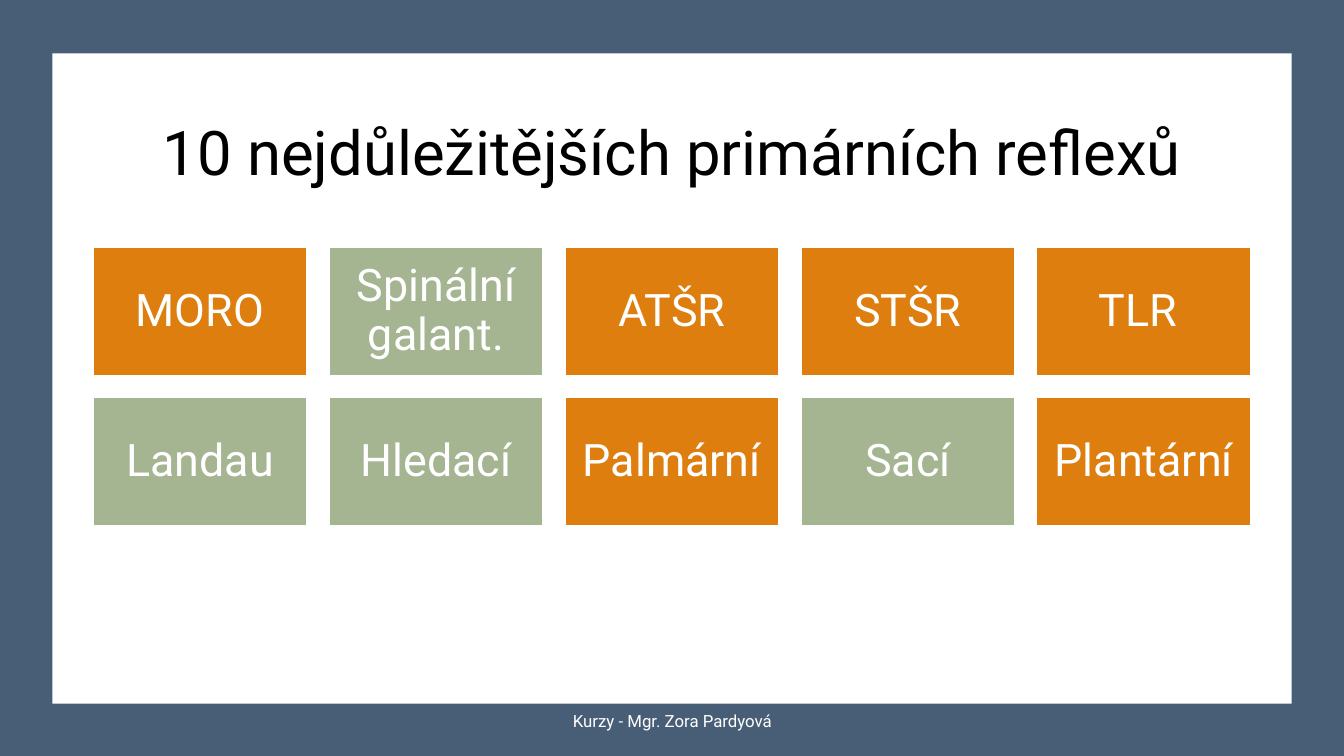
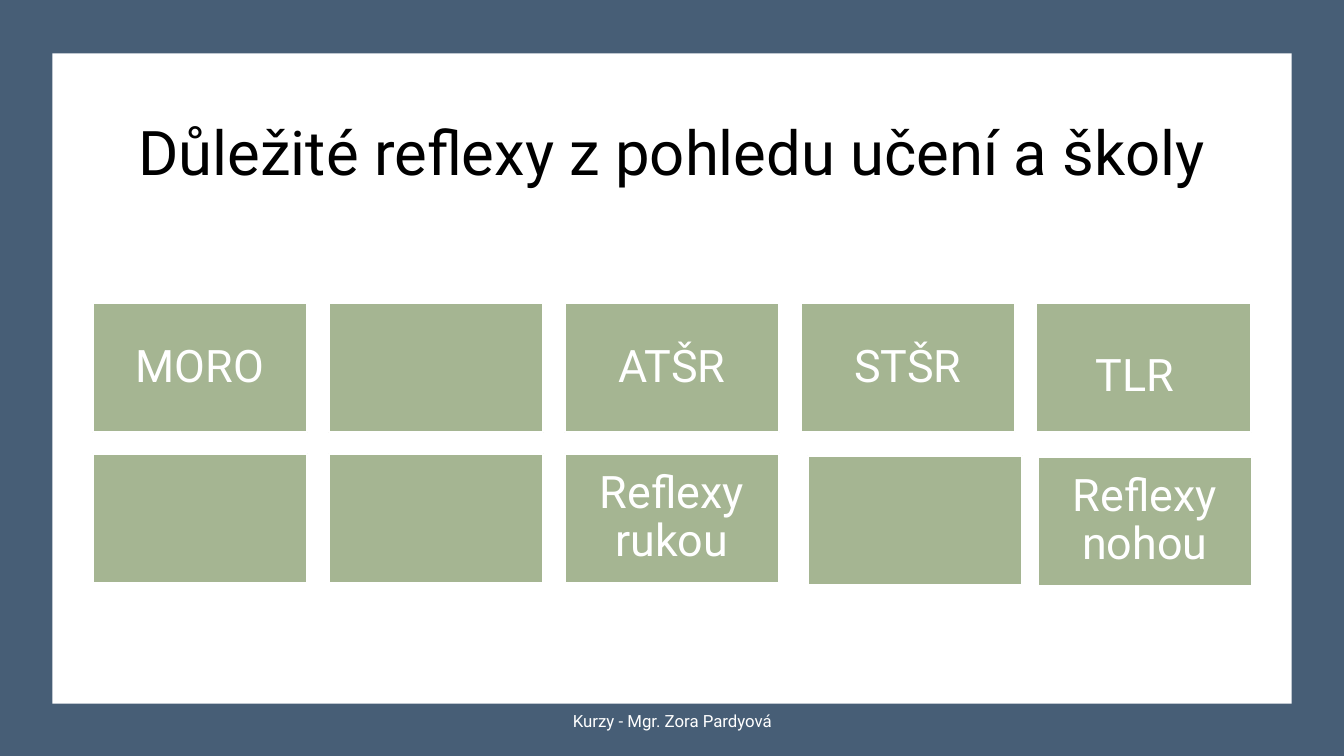
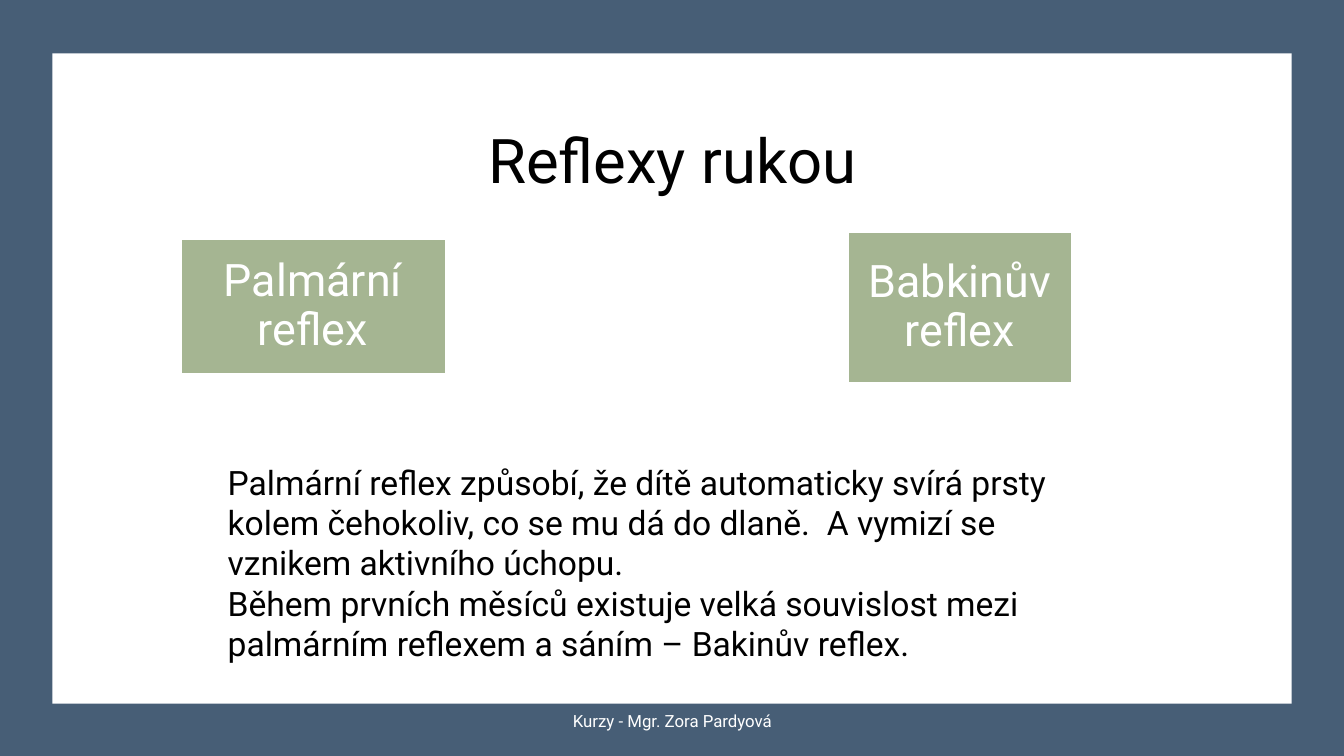
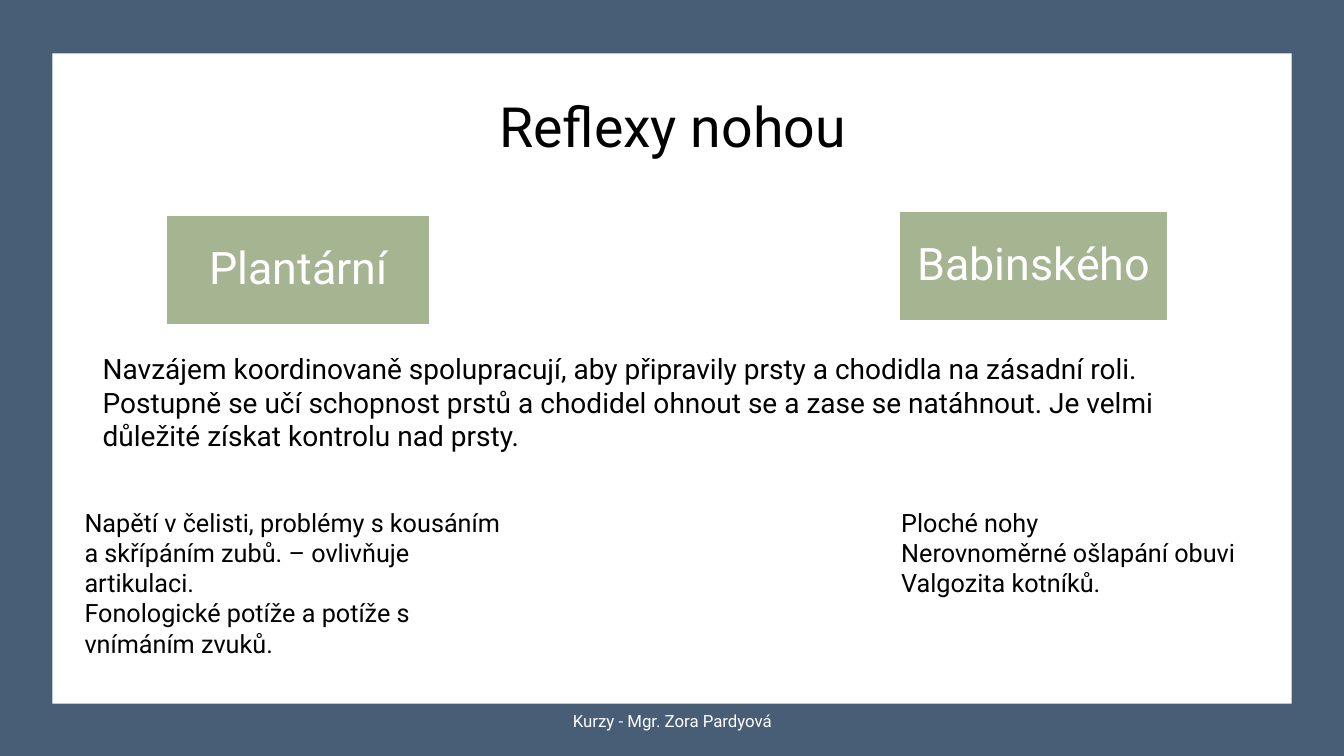
from pptx import Presentation
from pptx.dml.color import RGBColor
from pptx.enum.shapes import MSO_SHAPE
from pptx.enum.text import MSO_ANCHOR, PP_ALIGN
from pptx.util import Inches, Pt

FONT = "Roboto"
NAVY, WHITE, BLACK = "475E76", "FFFFFF", "000000"
ORANGE, SAGE = "DD7E0E", "A5B592"
WIDTH, HEIGHT = 13.33, 7.5
MARGIN, CONTENT_WIDTH = 0.92, 11.5
COLUMNS, TILE_WIDTH, TILE_HEIGHT, GAP = 5, 2.13, 1.28, 0.21


def add_panel(slide, place, fill, label="", outlined=False):
    panel = slide.shapes.add_shape(MSO_SHAPE.RECTANGLE, *map(Inches, place))
    panel.shadow.inherit = False
    panel.fill.solid()
    panel.fill.fore_color.rgb = RGBColor.from_string(fill)
    if outlined:
        panel.line.color.rgb = RGBColor.from_string(WHITE)
        panel.line.width = Pt(1.5)
    else:
        panel.line.fill.background()
    if label:
        write(panel.text_frame, [label], 32, WHITE, True, 0.9)
        for side in ("left", "top", "right", "bottom"):
            setattr(panel.text_frame, f"margin_{side}", Inches(0.13))
    return panel


def write(frame, lines, size, colour, centred=False, spacing=1.0):
    frame.word_wrap = True
    frame.vertical_anchor = MSO_ANCHOR.MIDDLE if centred else MSO_ANCHOR.TOP
    frame.text = "\n".join(lines)
    for paragraph in frame.paragraphs:
        paragraph.alignment = PP_ALIGN.CENTER if centred else PP_ALIGN.LEFT
        paragraph.line_spacing = spacing
        for run in paragraph.runs:
            run.font.name = FONT
            run.font.size = Pt(size)
            run.font.color.rgb = RGBColor.from_string(colour)


deck = Presentation()
deck.slide_width, deck.slide_height = Inches(WIDTH), Inches(HEIGHT)

headings = [
    ("10 nejdůležitějších primárních reflexů", 0.87, 44),
    ("Důležité reflexy z pohledu učení a školy", 0.87, 44),
    ("Reflexy rukou", 0.95, 44),
    ("Reflexy nohou", 0.62, 39.6),
]
for heading, top, size in headings:
    slide = deck.slides.add_slide(deck.slide_layouts[6])
    add_panel(slide, (0, 0, WIDTH, HEIGHT), NAVY)
    add_panel(slide, (0.52, 0.53, 12.29, 6.45), WHITE)
    footer = slide.shapes.add_textbox(*map(Inches, (4.42, 6.95, 4.5, 0.4)))
    write(footer.text_frame, ["Kurzy - Mgr. Zora Pardyová"], 12, WHITE, True)
    title = slide.shapes.add_textbox(*map(Inches, (MARGIN, top, CONTENT_WIDTH, 1.34)))
    write(title.text_frame, [heading], size, BLACK, True, 0.9)

overview, school, hands, feet = deck.slides

ten_reflexes = ["MORO", "Spinální galant.", "ATŠR", "STŠR", "TLR ",
                "Landau", "Hledací", "Palmární", "Sací", "Plantární"]
school_reflexes = ["MORO", "", "ATŠR", "STŠR", "TLR ",
                   "", "", "Reflexy rukou", "", "Reflexy nohou"]
sage_reflexes = {"Spinální galant.", "Landau", "Hledací", "Sací"}
school_offsets = {8: (0.07, 0.02), 9: (0.01, 0.03)}

grids = [
    (overview, 2.45, ten_reflexes, {}),
    (school, 3.01, school_reflexes, school_offsets),
]
for slide, grid_top, reflexes, offsets in grids:
    for position, reflex in enumerate(reflexes):
        row, column = divmod(position, COLUMNS)
        shift_x, shift_y = offsets.get(position, (0, 0))
        left = MARGIN + column * (TILE_WIDTH + GAP) + shift_x
        top = grid_top + row * (TILE_HEIGHT + GAP) + shift_y
        orange = slide is overview and reflex not in sage_reflexes
        tile = add_panel(slide, (left, top, TILE_WIDTH, TILE_HEIGHT),
                         ORANGE if orange else SAGE, reflex, True)
        if slide is school and reflex == "TLR ":
            tile.text_frame.margin_top = Inches(0.31)
            tile.text_frame.margin_right = Inches(0.2)

reflex_pairs = [
    (hands, (1.79, 2.37, 2.63, 1.34), "Palmární reflex"),
    (hands, (8.41, 2.3, 2.22, 1.5), "Babkinův reflex"),
    (feet, (1.65, 2.13, 2.62, 1.1), "Plantární"),
    (feet, (8.92, 2.09, 2.67, 1.1), "Babinského"),
]
for slide, place, reflex in reflex_pairs:
    add_panel(slide, place, SAGE, reflex, True)

descriptions = [
    (hands, (2.16, 4.53, 9.02, 2.12), 24, [
        "Palmární reflex způsobí, že dítě automaticky svírá prsty kolem čehokoliv, "
        "co se mu dá do dlaně.  A vymizí se vznikem aktivního úchopu.",
        "Během prvních měsíců existuje velká souvislost mezi palmárním reflexem "
        "a sáním – Bakinův reflex.",
    ]),
    (feet, (8.84, 4.98, 3.76, 1.01), 18, [
        "Ploché nohy",
        "Nerovnoměrné ošlapání obuvi",
        "Valgozita kotníků.",
    ]),
    (feet, (0.74, 4.98, 4.5, 1.31), 18, [
        "Napětí v čelisti, problémy s kousáním a skřípáním zubů. – ovlivňuje artikulaci.",
        "Fonologické potíže a potíže s vnímáním zvuků.",
    ]),
    (feet, (MARGIN, 3.44, CONTENT_WIDTH, 1.11), 20, [
        "Navzájem koordinovaně spolupracují, aby připravily prsty a chodidla na zásadní "
        "roli. Postupně se učí schopnost prstů a chodidel ohnout se a zase se natáhnout. "
        "Je velmi důležité získat kontrolu nad prsty.",
    ]),
]
for slide, place, size, sentences in descriptions:
    description = slide.shapes.add_textbox(*map(Inches, place))
    write(description.text_frame, sentences, size, BLACK)

deck.save("out.pptx")
